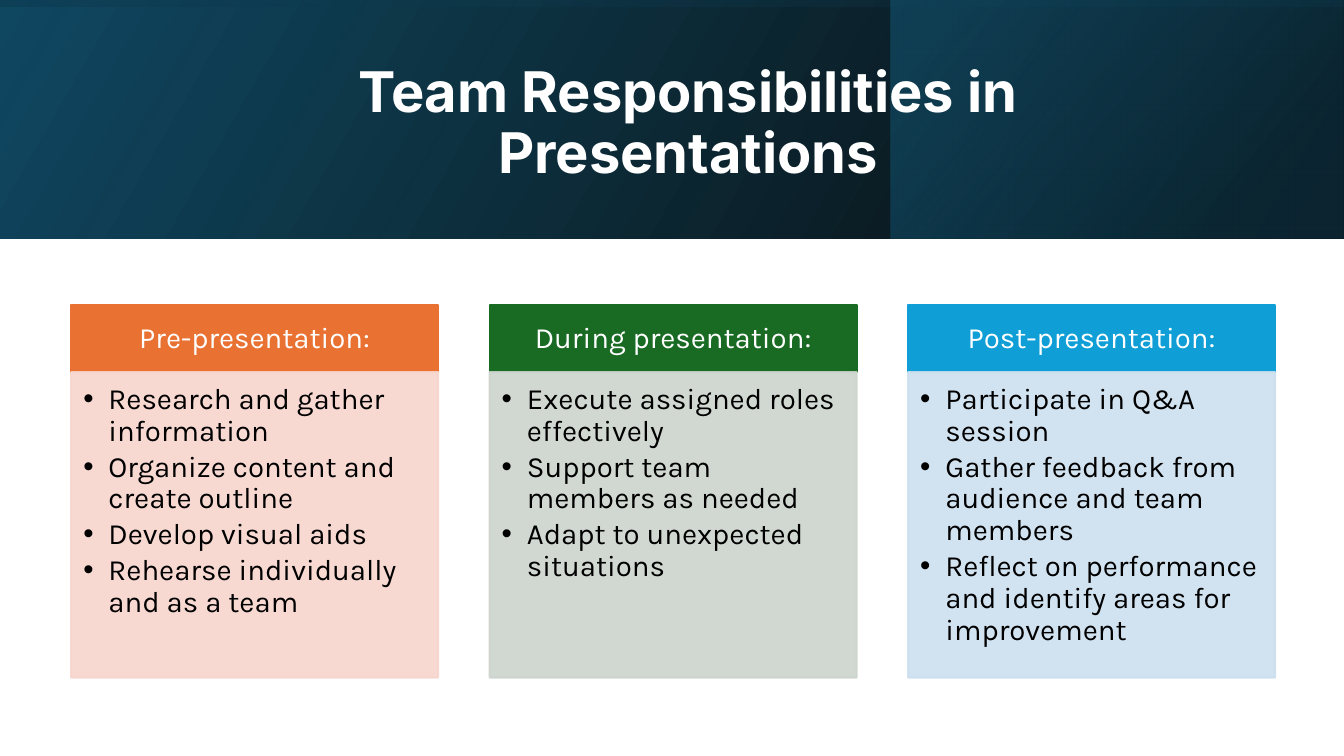
from lxml import etree
from pptx import Presentation
from pptx.dml.color import RGBColor
from pptx.enum.shapes import MSO_SHAPE
from pptx.enum.text import MSO_ANCHOR, PP_ALIGN
from pptx.oxml.ns import qn
from pptx.util import Pt

RECT = MSO_SHAPE.RECTANGLE
TOP, MIDDLE = MSO_ANCHOR.TOP, MSO_ANCHOR.MIDDLE
LEFT, CENTER = PP_ALIGN.LEFT, PP_ALIGN.CENTER


def rgb(value):
    return RGBColor.from_string(value)


def write(sp, lines, font="Karla", size=21, color="000000", bold=False,
          align=LEFT, anchor=TOP, insets=(8.6, 8.6, 11.5, 13), bullet=False):
    tf = sp.text_frame
    tf.word_wrap = True
    tf.vertical_anchor = anchor
    tf.margin_left, tf.margin_top, tf.margin_right, tf.margin_bottom = map(Pt, insets)
    for i, line in enumerate(lines):
        p = tf.paragraphs[0] if i == 0 else tf.add_paragraph()
        p.alignment = align
        p.line_spacing = 0.9
        r = p.add_run()
        r.text = line
        r.font.name, r.font.size, r.font.bold = font, Pt(size), bold
        r.font.color.rgb = rgb(color)
        if bullet:
            p.space_after = Pt(3)
            pPr = p._p.get_or_add_pPr()
            pPr.set("marL", str(Pt(18)))
            pPr.set("indent", str(-Pt(18)))
            etree.SubElement(pPr, qn("a:buFont"), typeface="Arial")
            etree.SubElement(pPr, qn("a:buChar"), char="•")


prs = Presentation()
prs.slide_width, prs.slide_height = Pt(960), Pt(540)
s = prs.slides.add_slide(prs.slide_layouts[6])

BAND = 170.6
bands = [
    (0, 0, 960, BAND, 0, 330, [(0, "000000", 96), (100, "104862", 100)]),
    (636.5, 0, 323, BAND, 0, 320, [(19, "0B3041", 68), (100, "156082", 48)]),
    (480 - BAND / 2, BAND / 2 - 480, BAND, 960, 270, 350,
     [(23, "104862", 16), (99, "000000", 45)]),
]
bands[0][6][1] = (100, "104862", 100)
for x, y, w, h, rotation, angle, stops in bands:
    sp = s.shapes.add_shape(RECT, Pt(x), Pt(y), Pt(w), Pt(h))
    sp.shadow.inherit = False
    sp.line.fill.background()
    sp.rotation = rotation
    spPr = sp._element.spPr
    spPr.find(qn("a:xfrm")).set("flipH", "1")
    grad = etree.Element(qn("a:gradFill"), rotWithShape="1")
    stop_list = etree.SubElement(grad, qn("a:gsLst"))
    for position, color, opacity in stops:
        stop = etree.SubElement(stop_list, qn("a:gs"), pos=str(position * 1000))
        clr = etree.SubElement(stop, qn("a:srgbClr"), val=color)
        etree.SubElement(clr, qn("a:alpha"), val=str(opacity * 1000))
    etree.SubElement(grad, qn("a:lin"), ang=str(angle * 60000), scaled="0")
    spPr.find(qn("a:prstGeom")).addnext(grad)

title = s.shapes.add_textbox(Pt(108.7), Pt(27.4), Pt(765.4), Pt(123.8))
write(title, ["Team Responsibilities in Presentations"], font="Inter", size=40,
      color="FFFFFF", bold=True, align=CENTER, anchor=MIDDLE, insets=(12, 3.6, 12, 3.6))

columns = [
    ("Pre-presentation:", "E97132", "F7D5CE", [
        "Research and gather information",
        "Organize content and create outline",
        "Develop visual aids",
        "Rehearse individually and as a team"]),
    ("During presentation:", "196B24", "CCD4CD", [
        "Execute assigned roles effectively",
        "Support team members as needed",
        "Adapt to unexpected situations"]),
    ("Post-presentation:", "0F9ED5", "CCDFEF", [
        "Participate in Q&A session",
        "Gather feedback from audience and team members",
        "Reflect on performance and identify areas for improvement"]),
]
COL_X, COL_STEP, COL_W = 50.9, 298.9, 262.1
HEAD_Y, HEAD_H, BODY_H = 218, 47.8, 218.2

for i, (heading, dark, light, items) in enumerate(columns):
    x = COL_X + i * COL_STEP
    parts = [(HEAD_Y, HEAD_H, dark, 100), (HEAD_Y + HEAD_H, BODY_H, light, 90)]
    boxes = []
    for y, h, color, opacity in parts:
        sp = s.shapes.add_shape(RECT, Pt(x), Pt(y), Pt(COL_W), Pt(h))
        sp.shadow.inherit = False
        sp.fill.solid()
        sp.fill.fore_color.rgb = rgb(color)
        sp.line.color.rgb = rgb(color)
        sp.line.width = Pt(1.5)
        for clr in sp._element.spPr.iter(qn("a:srgbClr")):
            etree.SubElement(clr, qn("a:alpha"), val=str(opacity * 1000))
        boxes.append(sp)
    head, body = boxes
    write(head, [heading], color="FFFFFF", align=CENTER, anchor=MIDDLE,
          insets=(11.5, 6.5, 11.5, 6.5))
    write(body, items, bullet=True)

prs.save("out.pptx")
